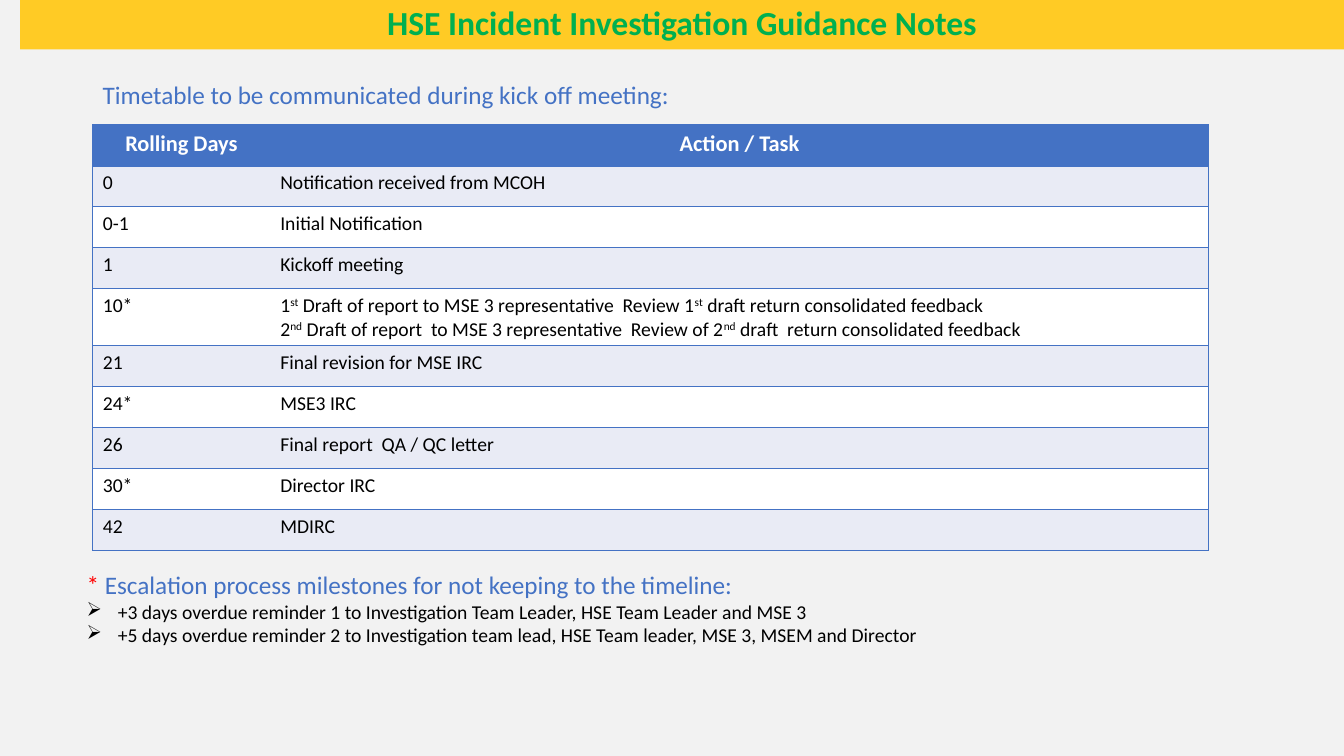
"""Builds the HSE incident investigation timetable slide."""
from lxml import etree
from pptx import Presentation
from pptx.dml.color import RGBColor
from pptx.enum.shapes import MSO_SHAPE
from pptx.enum.text import MSO_ANCHOR, PP_ALIGN
from pptx.oxml.ns import qn
from pptx.util import Inches, Pt

RECTANGLE = MSO_SHAPE.RECTANGLE
MIDDLE = MSO_ANCHOR.MIDDLE
CENTER = PP_ALIGN.CENTER
LEFT = PP_ALIGN.LEFT

GREY = RGBColor(0xF2, 0xF2, 0xF2)
YELLOW = RGBColor(0xFF, 0xCB, 0x25)
GREEN = RGBColor(0x00, 0xB0, 0x50)
BLUE = RGBColor(0x44, 0x72, 0xC4)
PALE_BLUE = RGBColor(0xE9, 0xEB, 0xF5)
WHITE = RGBColor(0xFF, 0xFF, 0xFF)
BLACK = RGBColor(0x00, 0x00, 0x00)
RED = RGBColor(0xFF, 0x00, 0x00)

TIMETABLE = [
    ("Rolling Days", "Action / Task"),
    ("0", "Notification received from MCOH"),
    ("0-1", "Initial Notification"),
    ("1", "Kickoff meeting"),
    ("10*", "1^st^ Draft of report to MSE 3 representative  Review 1^st^ draft return consolidated feedback\n"
            "2^nd^ Draft of report  to MSE 3 representative  Review of 2^nd^ draft  return consolidated feedback"),
    ("21", "Final revision for MSE IRC"),
    ("24*", "MSE3 IRC"),
    ("26", "Final report  QA / QC letter"),
    ("30*", "Director IRC"),
    ("42", "MDIRC"),
]
REMINDERS = [
    "+3 days overdue reminder 1 to Investigation Team Leader, HSE Team Leader and MSE 3",
    "+5 days overdue reminder 2 to Investigation team lead, HSE Team leader, MSE 3, MSEM and Director",
]


def set_font(paragraph, size, color, bold=False):
    font = paragraph.font
    font.name = "Calibri"
    font.size = Pt(size)
    font.bold = bold
    font.color.rgb = color


def set_borders(cell, visible_sides):
    properties = cell._tc.get_or_add_tcPr()
    for position, side in enumerate(("lnL", "lnR", "lnT", "lnB")):
        line = etree.Element(qn(f"a:{side}"), w=str(Pt(1)))
        if side in visible_sides:
            fill = etree.SubElement(line, qn("a:solidFill"))
            etree.SubElement(fill, qn("a:srgbClr"), val=str(BLUE))
        else:
            etree.SubElement(line, qn("a:noFill"))
        properties.insert(position, line)


prs = Presentation()
prs.slide_width = Inches(13.33)
prs.slide_height = Inches(7.5)
slide = prs.slides.add_slide(prs.slide_layouts[6])
slide.background.fill.solid()
slide.background.fill.fore_color.rgb = GREY

title_bar = slide.shapes.add_shape(RECTANGLE, Inches(0.2), 0, Inches(13.13), Inches(0.49))
title_bar.shadow.inherit = False
title_bar.fill.solid()
title_bar.fill.fore_color.rgb = YELLOW
title_bar.line.fill.background()
title_bar.text_frame.vertical_anchor = MIDDLE
title = title_bar.text_frame.paragraphs[0]
title.text = "HSE Incident Investigation Guidance Notes"
title.alignment = CENTER
title.line_spacing = 0.9
set_font(title, 24, GREEN, bold=True)

intro_box = slide.shapes.add_textbox(Inches(0.92), Inches(0.74), Inches(11.5), Inches(0.45))
intro_box.text_frame.word_wrap = True
intro = intro_box.text_frame.paragraphs[0]
intro.text = "Timetable to be communicated during kick off meeting:"
set_font(intro, 18, BLUE)

timetable = slide.shapes.add_table(
    len(TIMETABLE), 2, Inches(0.92), Inches(1.24), Inches(11.07), Inches(4.06)).table
timetable.columns[0].width = Inches(1.76)
timetable.columns[1].width = Inches(9.31)
for row, entries in enumerate(TIMETABLE):
    is_header = row == 0
    row_fill = BLUE if is_header else PALE_BLUE if row % 2 else WHITE
    for column, entry in enumerate(entries):
        cell = timetable.cell(row, column)
        cell.fill.solid()
        cell.fill.fore_color.rgb = row_fill
        set_borders(cell, ("lnR" if column else "lnL", "lnT", "lnB"))
        for index, line_text in enumerate(entry.split("\n")):
            paragraph = cell.text_frame.add_paragraph() if index else cell.text_frame.paragraphs[0]
            paragraph.alignment = CENTER if is_header else LEFT
            set_font(paragraph, 16 if is_header else 14, WHITE if is_header else BLACK, is_header)
            for part, words in enumerate(line_text.split("^")):
                run = paragraph.add_run()
                run.text = words
                if part % 2:
                    run._r.get_or_add_rPr().set("baseline", "30000")

escalation_box = slide.shapes.add_textbox(Inches(0.76), Inches(5.6), Inches(11.65), Inches(0.88))
escalation = escalation_box.text_frame
escalation.word_wrap = True
heading = escalation.paragraphs[0]
set_font(heading, 18, BLUE)
asterisk = heading.add_run()
asterisk.text = "* "
asterisk.font.color.rgb = RED
heading.add_run().text = "Escalation process milestones for not keeping to the timeline:"
for reminder in REMINDERS:
    paragraph = escalation.add_paragraph()
    paragraph.text = reminder
    properties = paragraph._p.get_or_add_pPr()
    properties.set("marL", str(Inches(0.31)))
    properties.set("indent", str(Inches(-0.31)))
    etree.SubElement(properties, qn("a:buChar"), char="➢")
    set_font(paragraph, 14, BLACK)

prs.save("out.pptx")
